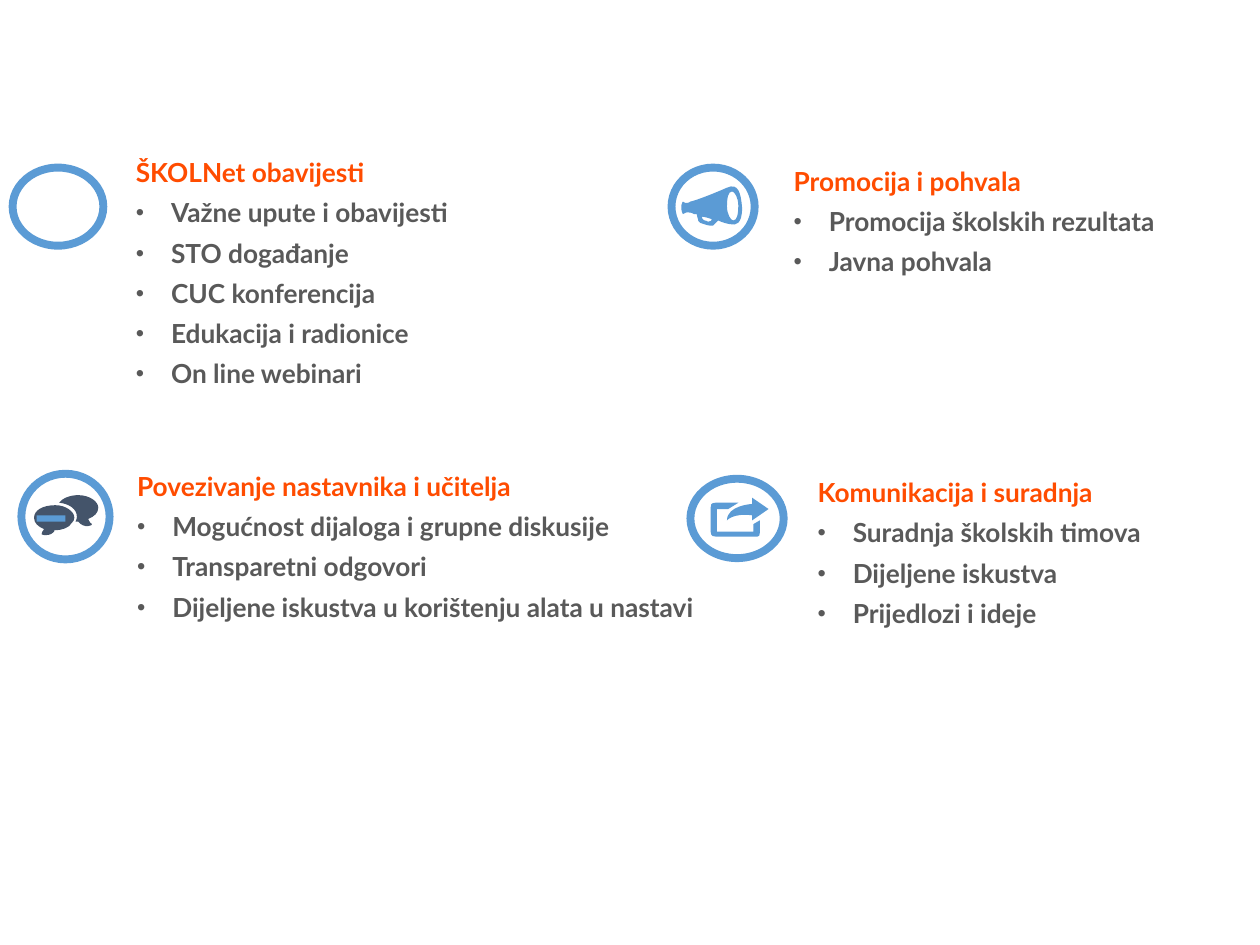
from lxml.etree import SubElement
from pptx import Presentation
from pptx.dml.color import RGBColor
from pptx.enum.shapes import MSO_SHAPE
from pptx.enum.text import MSO_AUTO_SIZE
from pptx.oxml.ns import qn
from pptx.util import Inches, Pt

BLUE, NAVY, WHITE, ORANGE, GREY = "5B9BD5", "44546A", "FFFFFF", "FF4C00", "595959"
INDENT = Inches(0.28)
FONT = {"name": "Lato", "size": Pt(15), "bold": True}
SPACING = {"line_spacing": 0.9, "space_after": Pt(6.8)}

FRONT = [[(0.44, 4.01), (0.34, 4.01, 0.27, 4.05, 0.27, 4.11),
          (0.27, 4.15, 0.3, 4.18, 0.35, 4.2), (0.34, 4.21, 0.33, 4.23, 0.33, 4.24),
          (0.32, 4.24, 0.38, 4.27, 0.43, 4.22), (0.43, 4.21),
          (0.49, 4.21, 0.55, 4.19, 0.57, 4.15), (0.58, 4.14, 0.59, 4.13, 0.59, 4.11),
          (0.59, 4.06, 0.52, 4.01, 0.44, 4.01)]]
BACK = [[(0.7, 4.12), (0.71, 4.14, 0.72, 4.16, 0.73, 4.16),
         (0.74, 4.17, 0.67, 4.2, 0.62, 4.14), (0.6, 4.14),
         (0.61, 4.12, 0.61, 4.11, 0.61, 4.1), (0.61, 4.04, 0.55, 4, 0.47, 3.99),
         (0.49, 3.96, 0.55, 3.93, 0.62, 3.93), (0.71, 3.93, 0.78, 3.98, 0.78, 4.03),
         (0.78, 4.07, 0.75, 4.1, 0.7, 4.12)]]
HORN = [[(5.77, 1.49), (5.68, 1.53, 5.53, 1.59, 5.48, 1.6),
         (5.47, 1.61, 5.44, 1.62, 5.42, 1.6), (5.42, 1.6, 5.39, 1.64, 5.42, 1.7),
         (5.44, 1.69, 5.44, 1.68, 5.49, 1.69), (5.5, 1.7, 5.51, 1.7, 5.53, 1.7),
         (5.53, 1.71, 5.54, 1.74, 5.54, 1.74), (5.54, 1.75, 5.54, 1.76, 5.56, 1.77),
         (5.59, 1.78, 5.62, 1.79, 5.63, 1.79), (5.66, 1.79),
         (5.67, 1.78, 5.7, 1.75, 5.7, 1.75), (5.74, 1.77, 5.79, 1.78, 5.8, 1.78),
         (5.84, 1.79, 5.89, 1.78, 5.89, 1.65), (5.88, 1.53, 5.86, 1.45, 5.77, 1.49)],
        [(5.62, 1.76), (5.61, 1.75, 5.59, 1.75, 5.59, 1.75),
         (5.58, 1.74, 5.57, 1.74, 5.57, 1.72), (5.59, 1.72, 5.62, 1.73, 5.65, 1.74),
         (5.65, 1.75, 5.64, 1.76, 5.62, 1.76)],
        [(5.82, 1.75), (5.8, 1.75, 5.77, 1.7, 5.77, 1.64),
         (5.77, 1.57, 5.78, 1.52, 5.81, 1.52), (5.83, 1.52, 5.86, 1.57, 5.86, 1.63),
         (5.86, 1.7, 5.85, 1.75, 5.82, 1.75)]]
ARROW = [[(5.77, 4.13), (5.77, 4.13, 5.82, 4.07, 5.97, 4.09), (5.97, 4.13),
          (6.1, 4.04), (5.97, 3.95), (5.97, 4), (5.97, 4, 5.77, 4.01, 5.77, 4.13)]]
TRAY = [[(5.78, 4.04), (5.69, 4.04), (5.69, 4.22), (5.98, 4.22), (5.98, 4.16),
         (6.03, 4.13), (6.03, 4.23), (6.03, 4.25, 6.03, 4.26, 5.99, 4.26),
         (5.69, 4.26), (5.67, 4.26, 5.64, 4.26, 5.64, 4.22), (5.64, 4.03),
         (5.64, 4.01, 5.64, 3.99, 5.68, 3.99), (5.86, 3.99)]]

ICONS = [
    ((0.1, 1.33, 0.72, 0.62), [], []),
    ((0.17, 3.76, 0.7, 0.68), [(FRONT, NAVY), (BACK, NAVY)], [(0.29, 4.09, 0.23, 0.05)]),
    ((5.33, 1.33, 0.66, 0.62), [(HORN, BLUE)], []),
    ((5.48, 3.8, 0.74, 0.63), [(ARROW, BLUE), (TRAY, BLUE)], []),
]
TEXTS = [
    ((0.98, 1.22, 5, 1.96), "ŠKOLNet obavijesti",
     ["Važne upute i obavijesti", "STO događanje", "CUC konferencija",
      "Edukacija i radionice", "On line webinari"]),
    ((6.39, 3.76, 4.17, 1.63), "Komunikacija i suradnja",
     ["Suradnja školskih timova", "Dijeljene iskustva", "Prijedlozi i ideje"]),
    ((6.2, 1.29, 5.18, 2.23), "Promocija i pohvala",
     ["Promocija školskih rezultata", "Javna pohvala"]),
    ((0.99, 3.71, 5, 1.63), "Povezivanje nastavnika i učitelja",
     ["Mogućnost dijaloga i grupne diskusije", "Transparetni odgovori",
      "Dijeljene iskustva u korištenju alata u nastavi"]),
]


def color(code):
    return RGBColor.from_string(code)


def assign(item, values):
    for key, value in values.items():
        setattr(item, key, value)


def paint(shape, fill, line=None):
    shape.shadow.inherit = False
    shape.fill.solid()
    shape.fill.fore_color.rgb = color(fill)
    if line:
        shape.line.color.rgb = color(line)
        shape.line.width = Pt(4.5)
    else:
        shape.line.fill.background()


def pairs(step):
    return [(Inches(x), Inches(y)) for x, y in zip(step[::2], step[1::2])]


def bend(shape, contours):
    nodes = shape._element.iter(qn("a:lnTo"))
    lines = iter(list(nodes))
    for contour in contours:
        for step in contour[1:]:
            head, *rest = [next(lines) for _ in pairs(step)]
            if rest:
                head.tag = qn("a:cubicBezTo")
                for node in rest:
                    head.append(node[0])
                    node.getparent().remove(node)


def outline(shapes, contours, fill):
    pen = None
    for contour in contours:
        first, *rest = [point for step in contour for point in pairs(step)]
        if pen:
            pen.move_to(*first)
        else:
            pen = shapes.build_freeform(*first)
        pen.add_line_segments(rest)
    shape = pen.convert_to_shape()
    bend(shape, contours)
    paint(shape, fill)


def icon(slide, ring, glyphs, bars):
    shapes = slide.shapes.add_group_shape().shapes
    paint(shapes.add_shape(MSO_SHAPE.OVAL, *map(Inches, ring)), WHITE, BLUE)
    for contours, fill in glyphs:
        outline(shapes, contours, fill)
    for bar in bars:
        paint(shapes.add_shape(MSO_SHAPE.RECTANGLE, *map(Inches, bar)), BLUE)


def bullet(para):
    props = para._p.get_or_add_pPr()
    props.set("marL", str(INDENT))
    props.set("indent", str(-INDENT))
    SubElement(props, qn("a:buSzPct")).set("val", "90000")
    SubElement(props, qn("a:buFont")).set("typeface", "Arial")
    SubElement(props, qn("a:buChar")).set("char", "•")


def block(slide, place, head, items):
    frame = slide.shapes.add_textbox(*map(Inches, place)).text_frame
    assign(frame, {"word_wrap": True, "auto_size": MSO_AUTO_SIZE.SHAPE_TO_FIT_TEXT})
    for i, text in enumerate([head] + items):
        para = frame.add_paragraph() if i else frame.paragraphs[0]
        if i:
            bullet(para)
        assign(para, SPACING)
        run = para.add_run()
        run.text = text
        assign(run.font, FONT)
        run.font.color.rgb = color(GREY if i else ORANGE)


def main():
    deck = Presentation()
    assign(deck, {"slide_width": Inches(10), "slide_height": Inches(7.5)})
    slide = deck.slides.add_slide(deck.slide_layouts[6])
    for entry in ICONS:
        icon(slide, *entry)
    for entry in TEXTS:
        block(slide, *entry)
    deck.save("out.pptx")


if __name__ == "__main__":
    main()
